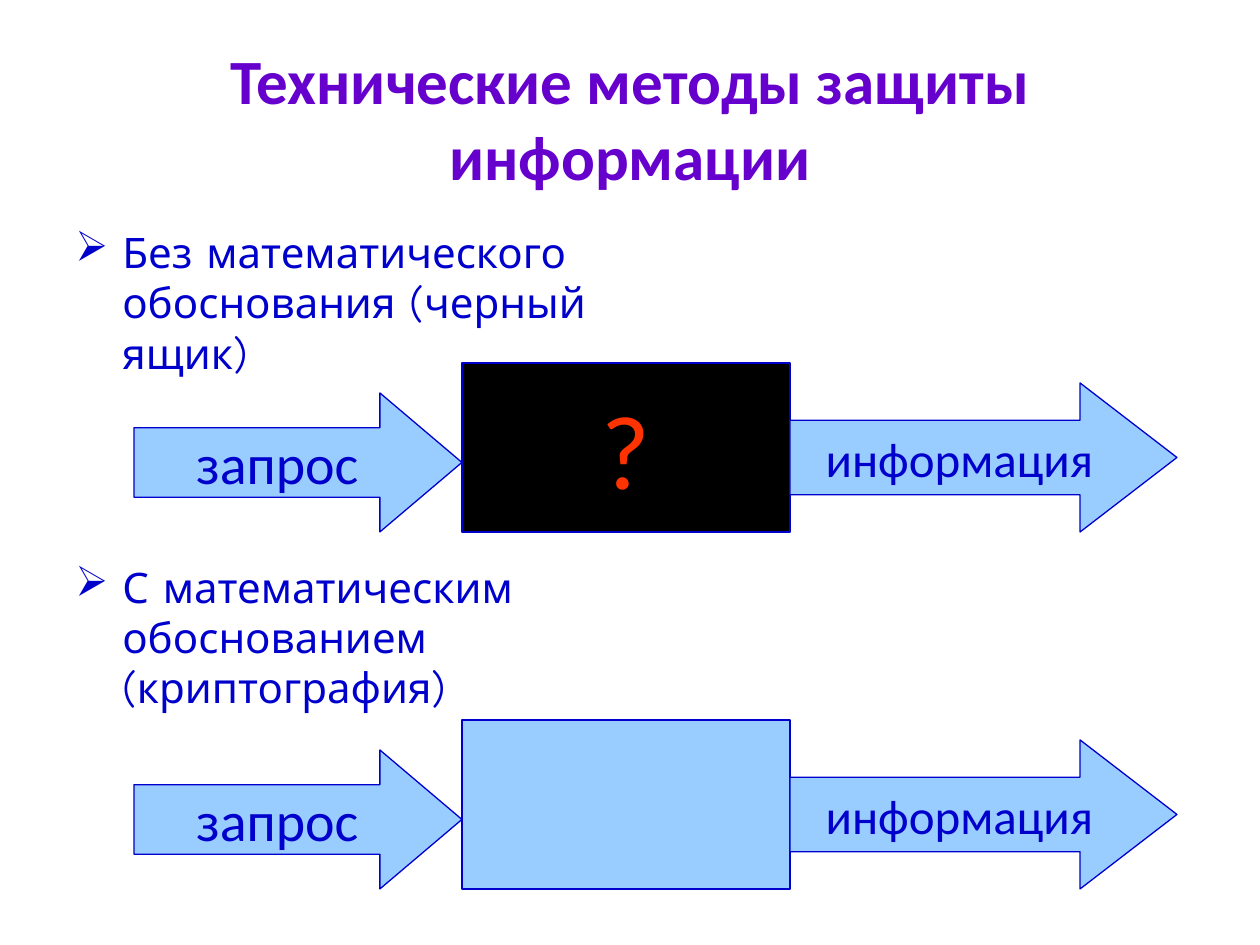
import pptx
import pptx.util
import pptx.dml.color
import pptx.enum.shapes
import pptx.enum.text
import pptx.oxml
import pptx.oxml.ns

PX = 914400 // 126
BLUE, SKY, BLACK = "0000CC", "99CCFF", "000000"
ARROW = pptx.enum.shapes.MSO_SHAPE.RIGHT_ARROW
RECTANGLE = pptx.enum.shapes.MSO_SHAPE.RECTANGLE
CENTER = pptx.enum.text.PP_ALIGN.CENTER
LEFT = pptx.enum.text.PP_ALIGN.LEFT
MIDDLE = pptx.enum.text.MSO_ANCHOR.MIDDLE

TITLE = "Технические методы защиты информации"
METHODS = [
    "Без математического обоснования (черный ящик)",
    "С математическим обоснованием (криптография)",
]
REQUEST = dict(kind=ARROW, width=328, height=139, head=0.59, text="запрос", size=32)
BLACK_BOX = dict(kind=RECTANGLE, width=328, height=169, fill=BLACK,
                 text="?", size=60, color="FF3300")
OPEN_BOX = dict(kind=RECTANGLE, width=328, height=169)
ANSWER = dict(kind=ARROW, width=387, height=149, head=0.65, text="информация", size=28)
ROWS = [
    (532, [REQUEST, BLACK_BOX, ANSWER]),
    (889, [REQUEST, OPEN_BOX, ANSWER]),
]
ROW_LEFT = 134
METHOD_GAP = 105
INDENT = 47


def rgb(value):
    return pptx.dml.color.RGBColor.from_string(value)


def px(*lengths):
    return [length * PX for length in lengths]


def write(para, text, size=24, color=BLUE, font="Calibri", bold=False, align=CENTER):
    para.alignment = align
    span = para.add_run()
    span.text = text
    span.font.size = pptx.util.Pt(size)
    span.font.name = font
    span.font.bold = bold
    span.font.color.rgb = rgb(color)


def add_bullet(para, mark, color):
    properties = para._p.get_or_add_pPr()
    properties.set("marL", str(INDENT * PX))
    properties.set("indent", str(-INDENT * PX))
    namespace = pptx.oxml.ns.nsdecls("a")
    for xml in (
        f'<a:buClr {namespace}><a:srgbClr val="{color}"/></a:buClr>',
        f'<a:buChar {namespace} char="{mark}"/>',
    ):
        properties.append(pptx.oxml.parse_xml(xml))


def add_text_box(page, left, top, width, height):
    frame = page.shapes.add_textbox(*px(left, top, width, height)).text_frame
    frame.word_wrap = True
    return frame


def add_block(page, left, bottom, kind, width, height, head=None, fill=SKY,
              text=None, size=24, color=BLUE):
    box = page.shapes.add_shape(kind, *px(left, bottom - height, width, height))
    box.shadow.inherit = False
    box.fill.solid()
    box.fill.fore_color.rgb = rgb(fill)
    box.line.color.rgb = rgb(BLUE)
    box.line.width = pptx.util.Pt(0.75)
    if head:
        box.adjustments[0] = 0.5
        box.adjustments[1] = head
    if text:
        box.text_frame.word_wrap = False
        box.text_frame.vertical_anchor = MIDDLE
        write(box.text_frame.paragraphs[0], text, size=size, color=color)


def main():
    deck = pptx.Presentation()
    deck.slide_width, deck.slide_height = px(1260, 945)
    page = deck.slides.add_slide(deck.slide_layouts[6])

    heading = add_text_box(page, 63, 38, 1134, 158)
    heading.vertical_anchor = MIDDLE
    write(heading.paragraphs[0], TITLE, size=36, color="6600CC", bold=True)

    body = add_text_box(page, 63, 220, 557, 624)
    for index, method in enumerate(METHODS):
        para = body.add_paragraph() if index else body.paragraphs[0]
        para.space_before = pptx.util.Pt(METHOD_GAP * index)
        write(para, method, font="Comic Neue", align=LEFT)
        add_bullet(para, "➢", BLUE)

    for bottom, blocks in ROWS:
        left = ROW_LEFT
        for block in blocks:
            add_block(page, left, bottom, **block)
            left += block["width"]

    deck.save("out.pptx")


if __name__ == "__main__":
    main()
